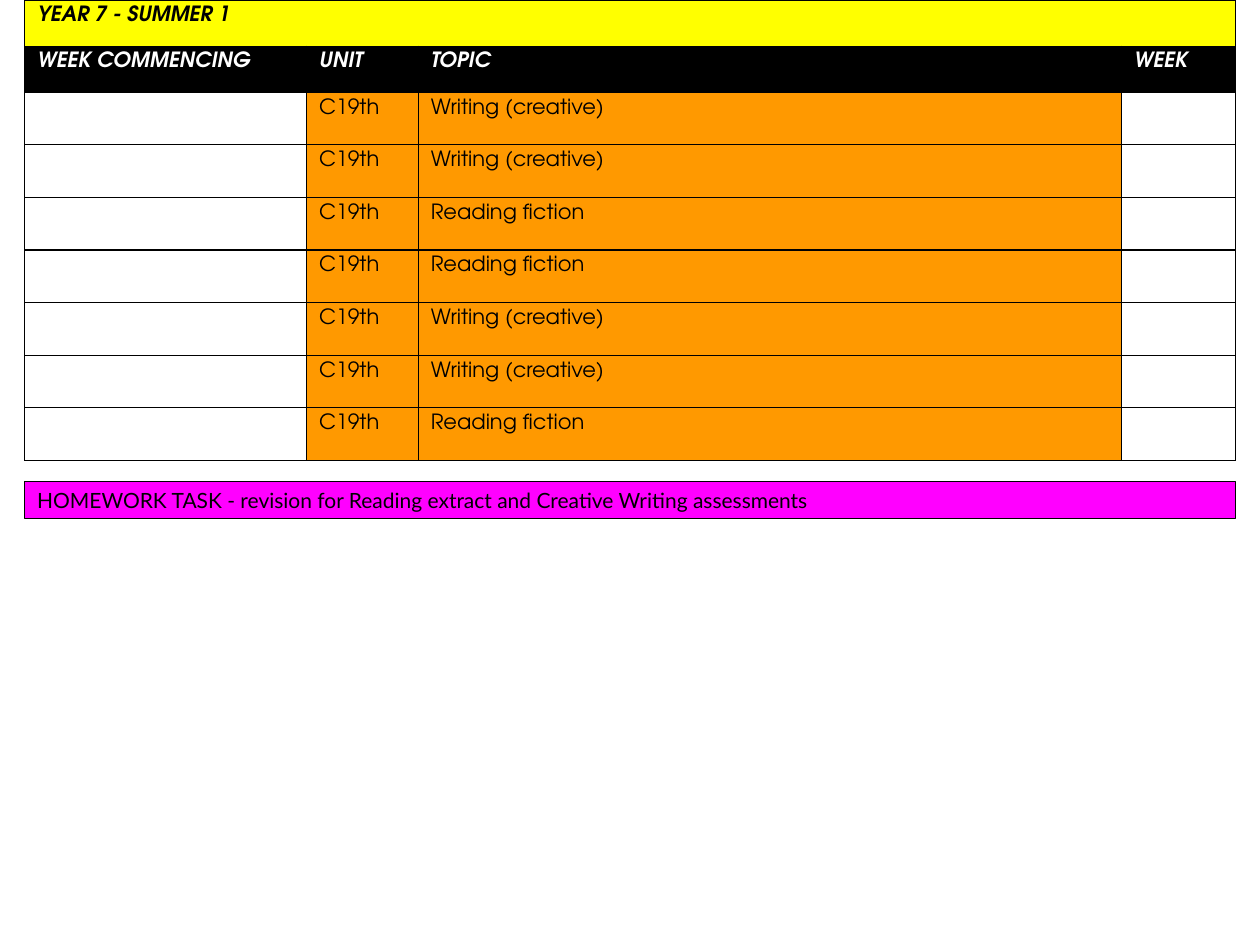
"""Build the Year 7 Summer 1 scheme-of-work slide."""
from lxml import etree
from pptx import Presentation
from pptx.dml.color import RGBColor
from pptx.enum.shapes import MSO_SHAPE
from pptx.enum.text import MSO_ANCHOR, PP_ALIGN
from pptx.oxml.ns import qn
from pptx.util import Cm, Pt

RECT = MSO_SHAPE.RECTANGLE
MIDDLE = MSO_ANCHOR.MIDDLE
LEFT = PP_ALIGN.LEFT

TITLE = "YEAR 7 - SUMMER 1"
HEADINGS = ["WEEK COMMENCING", "UNIT", "TOPIC", "WEEK"]
UNIT = "C19th"
WRITING, READING = "Writing (creative)", "Reading fiction"
TOPICS = [WRITING, WRITING, READING, READING, WRITING, WRITING, READING]
HOMEWORK = "HOMEWORK TASK - revision for Reading extract and Creative Writing assessments"

TABLE_FONT, HOMEWORK_FONT = "TeX Gyre Adventor", "Lato"
BLACK, WHITE = "000000", "FFFFFF"
YELLOW, ORANGE, MAGENTA = "FFFF00", "FF9900", "FF00FF"

MARGIN = 0.5
COL_WIDTHS = [5.68, 2.25, 14.18, 2.3]
HEAD_HEIGHT, TOPIC_HEIGHT = 0.93, 1.06
HOMEWORK_TOP, HOMEWORK_HEIGHT = 9.71, 0.74
LINE_WIDTH = Pt(0.75)


def rgb(value):
    return RGBColor.from_string(value)


def add_text(tf, text, font, color=BLACK, heading=False):
    p = tf.paragraphs[0]
    p.alignment = LEFT
    r = p.add_run()
    r.text = text
    r.font.name = font
    r.font.size = Pt(12)
    r.font.bold = r.font.italic = heading
    r.font.color.rgb = rgb(color)


def set_borders(cell):
    tc_pr = cell._tc.get_or_add_tcPr()
    for i, side in enumerate(("a:lnL", "a:lnR", "a:lnT", "a:lnB")):
        ln = etree.Element(qn(side), w=str(LINE_WIDTH))
        fill = etree.SubElement(ln, qn("a:solidFill"))
        etree.SubElement(fill, qn("a:srgbClr"), val=BLACK)
        tc_pr.insert(i, ln)


def format_cell(cell, text, fill, color, heading):
    if fill:
        cell.fill.solid()
        cell.fill.fore_color.rgb = rgb(fill)
    else:
        cell.fill.background()
    set_borders(cell)
    if text:
        add_text(cell.text_frame, text, TABLE_FONT, color, heading)


def add_schedule(s):
    rows = [([TITLE, "", "", ""], [YELLOW] * 4, BLACK, True),
            (HEADINGS, [BLACK] * 4, WHITE, True)]
    rows += [(["", UNIT, topic, ""], [None, ORANGE, ORANGE, None], BLACK, False)
             for topic in TOPICS]
    heights = [HEAD_HEIGHT] * 2 + [TOPIC_HEIGHT] * len(TOPICS)
    table = s.shapes.add_table(len(rows), len(COL_WIDTHS), Cm(MARGIN), Cm(0),
                               Cm(sum(COL_WIDTHS)), Cm(sum(heights))).table
    table.first_row = table.horz_banding = False
    for column, width in zip(table.columns, COL_WIDTHS):
        column.width = Cm(width)
    for row, height, (texts, fills, color, heading) in zip(table.rows, heights, rows):
        row.height = Cm(height)
        for cell, text, fill in zip(row.cells, texts, fills):
            format_cell(cell, text, fill, color, heading)
    table.cell(0, 0).merge(table.cell(0, len(COL_WIDTHS) - 1))


def add_homework(s):
    sp = s.shapes.add_shape(RECT, Cm(MARGIN), Cm(HOMEWORK_TOP),
                            Cm(sum(COL_WIDTHS)), Cm(HOMEWORK_HEIGHT))
    sp.shadow.inherit = False
    sp.fill.solid()
    sp.fill.fore_color.rgb = rgb(MAGENTA)
    sp.line.color.rgb = rgb(BLACK)
    sp.line.width = LINE_WIDTH
    tf = sp.text_frame
    tf.word_wrap = True
    tf.vertical_anchor = MIDDLE
    tf.margin_left = tf.margin_right = tf.margin_top = tf.margin_bottom = Cm(0.25)
    add_text(tf, HOMEWORK, HOMEWORK_FONT)


def main():
    prs = Presentation()
    prs.slide_width, prs.slide_height = Cm(25.4), Cm(19.05)
    s = prs.slides.add_slide(prs.slide_layouts[6])
    add_schedule(s)
    add_homework(s)
    prs.save("out.pptx")


if __name__ == "__main__":
    main()
